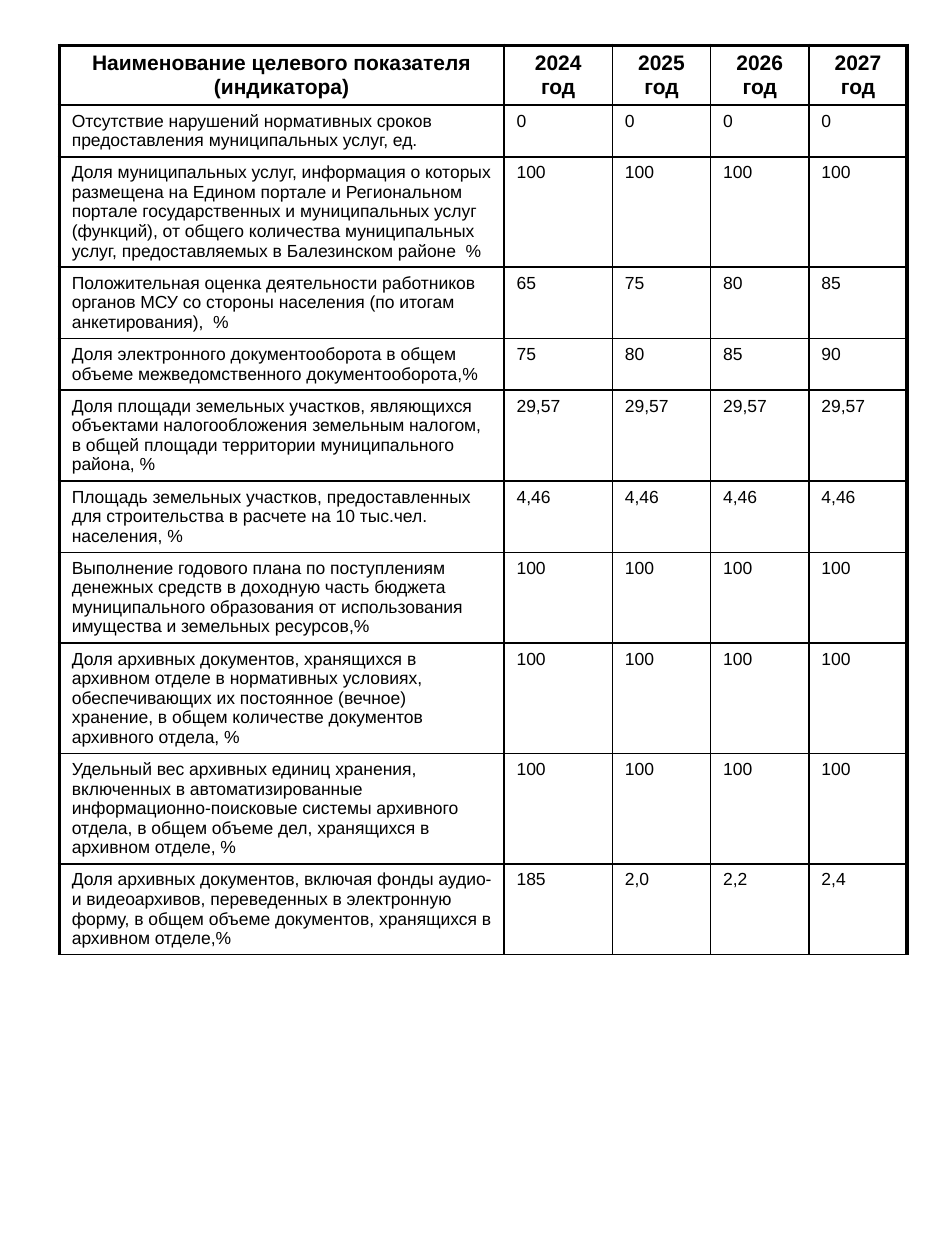
from lxml.etree import SubElement as add_element
from pptx import Presentation
from pptx.dml.color import RGBColor as Rgb
from pptx.enum.text import MSO_ANCHOR as Anchor, PP_ALIGN as Align
from pptx.oxml.ns import qn
from pptx.oxml.xmlchemy import OxmlElement as new_element
from pptx.util import Inches, Pt

COLORS = {"ink": "000000", "paper": "FFFFFF"}
FONT = "Arial"
GRID_COLUMNS, GRID_ROWS = 750, 1000
THIN, THICK = 1, 2.25

YEARS = range(2024, 2028)
HEADER = ["Наименование целевого показателя (индикатора)"] + [f"{year} год" for year in YEARS]

# Indicator, values by year, smallest row height in grid rows
INDICATORS = [
    ("Отсутствие нарушений нормативных сроков предоставления муниципальных услуг, ед.",
     ["0"] * 4, 20),
    ("Доля муниципальных услуг, информация о которых размещена на Едином портале и "
     "Региональном портале государственных и муниципальных услуг (функций), от общего "
     "количества муниципальных услуг, предоставляемых в Балезинском районе  %",
     ["100"] * 4, 50),
    ("Положительная оценка деятельности работников органов МСУ со стороны населения "
     "(по итогам анкетирования),  %",
     ["65", "75", "80", "85"], 27),
    ("Доля электронного документооборота в общем объеме межведомственного "
     "документооборота,%",
     ["75", "80", "85", "90"], 20),
    ("Доля площади земельных участков, являющихся объектами налогообложения земельным "
     "налогом, в общей площади территории муниципального района, %",
     ["29,57"] * 4, 35),
    ("Площадь земельных участков, предоставленных для строительства в расчете на "
     "10 тыс.чел. населения, %",
     ["4,46"] * 4, 27),
    ("Выполнение годового плана по поступлениям денежных средств в доходную часть бюджета "
     "муниципального образования от использования имущества и земельных ресурсов,%",
     ["100"] * 4, 39),
    ("Доля архивных документов, хранящихся в архивном отделе в нормативных условиях, "
     "обеспечивающих их постоянное (вечное) хранение, в общем количестве документов "
     "архивного отдела, %",
     ["100"] * 4, 42),
    ("Удельный вес архивных единиц хранения, включенных в автоматизированные "
     "информационно-поисковые системы архивного отдела, в общем объеме дел, хранящихся "
     "в архивном отделе, %",
     ["100"] * 4, 42),
    ("Доля архивных документов, включая фонды аудио- и видеоархивов, переведенных в "
     "электронную форму, в общем объеме документов, хранящихся в архивном отделе,%",
     ["185", "2,0", "2,2", "2,4"], 39),
]


def write_text(frame, text, size=10, bold=False, align=Align.LEFT, before=20):
    """Fill a text frame; before is the gap above in percent of a line."""
    para = frame.paragraphs[0]
    para.alignment = align
    gap = add_element(para._p.get_or_add_pPr(), qn("a:spcBef"))
    add_element(gap, qn("a:spcPct"), val=str(before * 1000))
    span = para.add_run()
    span.text = text
    span.font.name, span.font.size, span.font.bold = FONT, Pt(size), bold
    span.font.color.rgb = Rgb.from_string(COLORS["ink"])


class Page:
    """Style and current slide, measured on a fine grid."""

    def __init__(self, deck):
        self.slide = deck.slides.add_slide(deck.slide_layouts[6])
        self.column = deck.slide_width // GRID_COLUMNS
        self.row = deck.slide_height // GRID_ROWS
        fill = self.slide.background.fill
        fill.solid()
        fill.fore_color.rgb = Rgb.from_string(COLORS["paper"])

    def border(self, cell, **widths):
        """Draw cell borders, given in the order L, R, T, B."""
        properties = cell._tc.get_or_add_tcPr()
        for index, (side, width) in enumerate(widths.items()):
            line = new_element(f"a:ln{side}")
            line.set("w", str(Pt(width)))
            fill = add_element(line, qn("a:solidFill"))
            add_element(fill, qn("a:srgbClr"), val=COLORS["ink"])
            properties.insert(index, line)

    def table(self, left, top, height, widths, heights, records):
        box = self.slide.shapes.add_table(
            len(heights), len(widths), left * self.column, top * self.row,
            sum(widths) * self.column, height * self.row)
        table = box.table
        table.first_row = table.horz_banding = False
        for column, width in zip(table.columns, widths):
            column.width = width * self.column
        for row, row_height in zip(table.rows, heights):
            row.height = row_height * self.row
        box.height = height * self.row

        last = len(widths) - 1
        for r, record in enumerate(records):
            style = {"size": 12, "bold": True, "align": Align.CENTER} if r == 0 else {}
            for c, text in enumerate(record):
                cell = table.cell(r, c)
                cell.vertical_anchor = Anchor.TOP
                cell.fill.background()
                write_text(cell.text_frame, text, **style)
                self.border(cell, L=THICK if c == 0 else THIN,
                            R=THICK if c == last else THIN,
                            T=THICK if r == 0 else THIN, B=THIN)


def main():
    deck = Presentation()
    deck.slide_width, deck.slide_height = Inches(7.5), Inches(10)
    page = Page(deck)

    # Target indicators by year
    page.table(
        left=47, top=36, height=783,
        widths=[353, 86, 78, 78, 78],
        heights=[32] + [height for _, _, height in INDICATORS],
        records=[HEADER] + [[name, *values] for name, values, _ in INDICATORS])

    deck.save("out.pptx")


if __name__ == "__main__":
    main()
